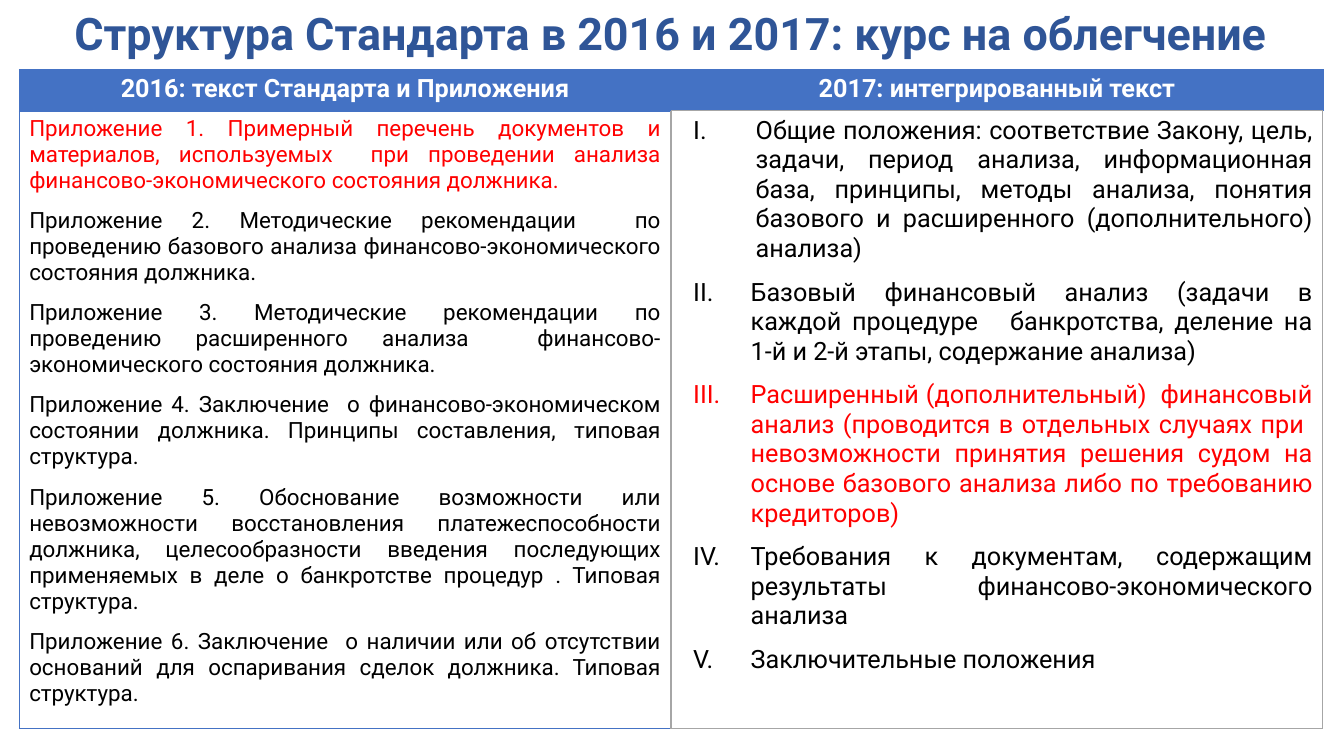
"""Build a slide comparing the structure of the Standard in 2016 and 2017."""
import pptx
import pptx.dml.color
import pptx.enum.text
import pptx.oxml
import pptx.oxml.ns
import pptx.util
from pptx.util import Inches, Pt

RGBColor = pptx.dml.color.RGBColor
Align = pptx.enum.text.PP_ALIGN
Anchor = pptx.enum.text.MSO_ANCHOR

TITLE_BLUE = RGBColor(0x2F, 0x55, 0x97)
TABLE_BLUE = RGBColor(0x44, 0x72, 0xC4)
GRID_GREY = RGBColor(0xA6, 0xA6, 0xA6)
WHITE = RGBColor(0xFF, 0xFF, 0xFF)
BLACK = RGBColor(0, 0, 0)
RED = RGBColor(0xFF, 0, 0)

TITLE = "Структура Стандарта в 2016 и 2017: курс на облегчение"
HEADERS = ["2016: текст Стандарта и Приложения", "2017: интегрированный текст"]
APPENDICES = [
    ("Приложение 1. Примерный перечень документов и материалов, используемых  при проведении "
     "анализа финансово-экономического состояния должника.", RED),
    ("Приложение 2. Методические рекомендации  по проведению базового анализа "
     "финансово-экономического состояния должника.", BLACK),
    ("Приложение 3. Методические рекомендации по проведению расширенного анализа  "
     "финансово-экономического состояния должника.", BLACK),
    ("Приложение 4. Заключение  о финансово-экономическом состоянии должника. "
     "Принципы составления, типовая структура.", BLACK),
    ("Приложение 5. Обоснование возможности или невозможности восстановления платежеспособности "
     "должника, целесообразности введения последующих применяемых в деле о банкротстве процедур . "
     "Типовая структура.", BLACK),
    ("Приложение 6. Заключение  о наличии или об отсутствии оснований для оспаривания сделок "
     "должника. Типовая структура.", BLACK),
]
SECTIONS = [
    ("Общие положения: соответствие Закону, цель, задачи, период анализа, информационная база, "
     "принципы, методы анализа, понятия базового и расширенного (дополнительного) анализа)", BLACK),
    ("Базовый финансовый анализ (задачи в каждой процедуре   банкротства, деление на 1-й и 2-й "
     "этапы, содержание анализа)", BLACK),
    ("Расширенный (дополнительный)  финансовый анализ (проводится в отдельных случаях при  "
     "невозможности принятия решения судом на основе базового анализа либо по требованию "
     "кредиторов)", RED),
    ("Требования к документам, содержащим результаты    финансово-экономического анализа", BLACK),
    ("Заключительные положения", BLACK),
]
BLUE_LINE = (TABLE_BLUE, 0.5)
GREY_LINE = (GRID_GREY, 1)
BORDERS = {
    (0, 0): {"L": BLUE_LINE, "R": BLUE_LINE, "T": BLUE_LINE, "B": BLUE_LINE},
    (0, 1): {"L": BLUE_LINE, "R": BLUE_LINE, "T": BLUE_LINE, "B": GREY_LINE},
    (1, 0): {"L": BLUE_LINE, "R": GREY_LINE, "T": BLUE_LINE, "B": BLUE_LINE},
    (1, 1): {"L": GREY_LINE, "R": GREY_LINE, "T": GREY_LINE, "B": GREY_LINE},
}
LEFT, WIDTH = 0.19, 12.93
TITLE_TOP, TABLE_TOP = 0.02, 0.69
ROW_HEIGHTS = [0.41, 5.95]
FIRST_INDENT, NEXT_INDENT = (0.74, -0.62), (0.69, -0.57)


def write(frame, lines, size, bold, **paragraph_format):
    """Write coloured lines as paragraphs of a text frame."""
    for index, (text, color) in enumerate(lines):
        paragraph = frame.add_paragraph() if index else frame.paragraphs[0]
        for name, value in paragraph_format.items():
            setattr(paragraph, name, value)
        run = paragraph.add_run()
        run.text = text
        for name, value in {"size": Pt(size), "bold": bold, "name": "Roboto"}.items():
            setattr(run.font, name, value)
        run.font.color.rgb = color


def draw_borders(cell, borders):
    """Add the border lines of one table cell."""
    properties = cell._tc.get_or_add_tcPr()
    for side, (color, width) in borders.items():
        properties.append(pptx.oxml.parse_xml(
            f'<a:ln{side} {pptx.oxml.ns.nsdecls("a")} w="{Pt(width)}"><a:solidFill>'
            f'<a:srgbClr val="{color}"/></a:solidFill></a:ln{side}>'))


def number_sections(frame):
    """Give the paragraphs Roman numbers with hanging indents."""
    for index, paragraph in enumerate(frame.paragraphs):
        margin, indent = NEXT_INDENT if index else FIRST_INDENT
        properties = paragraph._p.get_or_add_pPr()
        properties.set("marL", str(Inches(margin)))
        properties.set("indent", str(Inches(indent)))
        number = pptx.oxml.parse_xml(
            f'<a:buAutoNum {pptx.oxml.ns.nsdecls("a")} type="romanUcPeriod"/>')
        properties.append(number)
        if index == 0:
            properties.append(pptx.oxml.parse_xml(
                f'<a:tabLst {pptx.oxml.ns.nsdecls("a")}>'
                f'<a:tab pos="{Inches(NEXT_INDENT[0])}" algn="l"/></a:tabLst>'))


def main():
    """Create and save the slide."""
    presentation = pptx.Presentation()
    presentation.slide_width, presentation.slide_height = Inches(13.33), Inches(7.5)
    slide = presentation.slides.add_slide(presentation.slide_layouts[6])

    title = slide.shapes.add_textbox(Inches(LEFT), Inches(TITLE_TOP), Inches(WIDTH),
                                     Inches(TABLE_TOP - TITLE_TOP)).text_frame
    title.word_wrap = True
    title.vertical_anchor = Anchor.MIDDLE
    write(title, [(TITLE, TITLE_BLUE)], 32, True, alignment=Align.CENTER, line_spacing=0.9)

    table = slide.shapes.add_table(2, 2, Inches(LEFT), Inches(TABLE_TOP), Inches(WIDTH),
                                   Inches(sum(ROW_HEIGHTS))).table
    table.first_row = table.horz_banding = False
    for row, height in zip(table.rows, ROW_HEIGHTS):
        row.height = Inches(height)
    for (row, column), borders in BORDERS.items():
        cell = table.cell(row, column)
        draw_borders(cell, borders)
        cell.fill.solid()
        cell.fill.fore_color.rgb = WHITE if row else TABLE_BLUE

    for column, header in enumerate(HEADERS):
        write(table.cell(0, column).text_frame, [(header, WHITE)], 18, True,
              alignment=Align.CENTER)
    for column, (lines, size) in enumerate([(APPENDICES, 16), (SECTIONS, 18)]):
        write(table.cell(1, column).text_frame, lines, size, False,
              alignment=Align.JUSTIFY, space_before=Pt(10))
    number_sections(table.cell(1, 1).text_frame)
    presentation.save("out.pptx")


if __name__ == "__main__":
    main()
